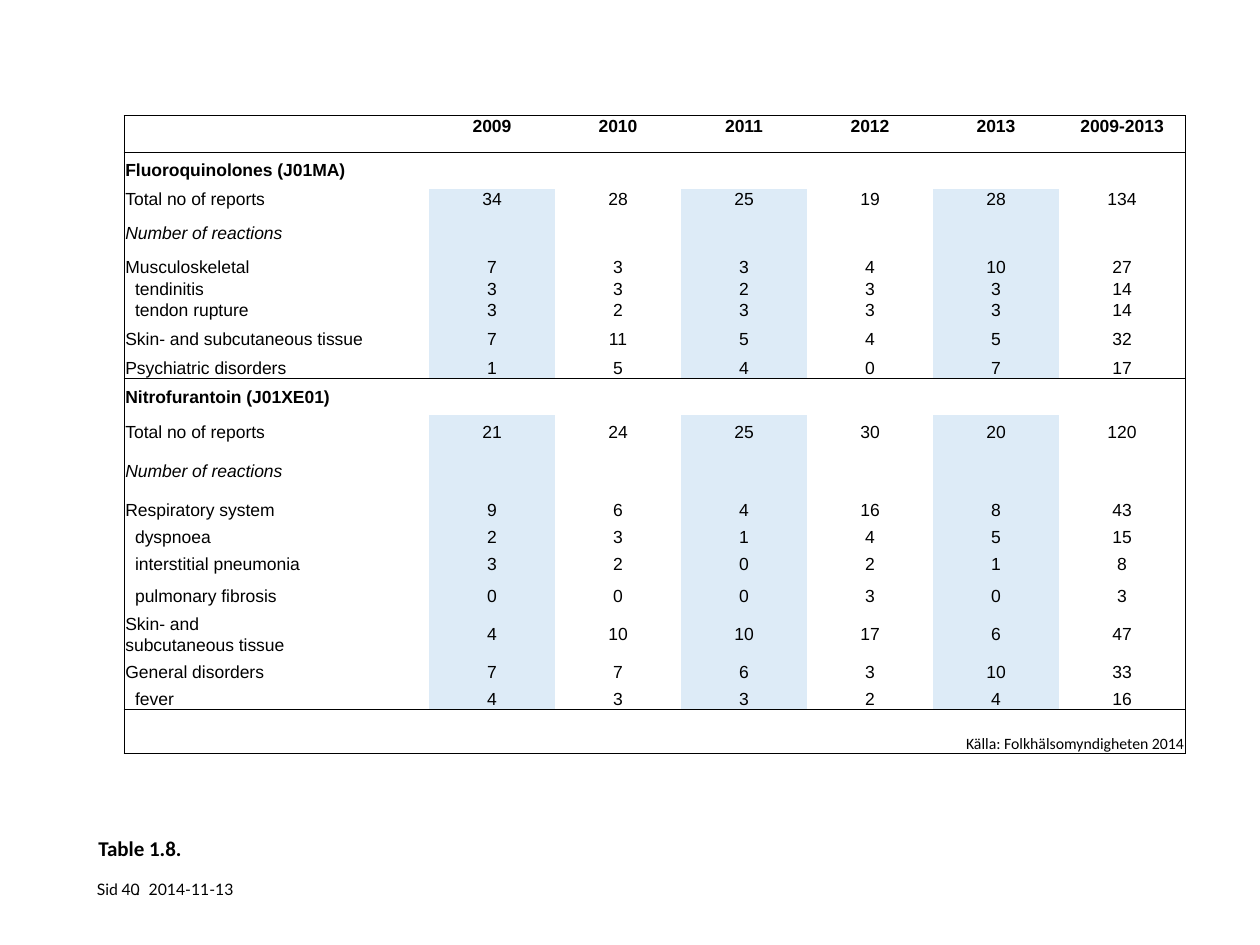
import lxml.etree
import pptx
import pptx.dml.color
import pptx.enum.text
import pptx.oxml.ns
import pptx.util

Pt = pptx.util.Pt
qn = pptx.oxml.ns.qn
ALIGN = pptx.enum.text.PP_ALIGN
ANCHOR = pptx.enum.text.MSO_ANCHOR

BLACK = pptx.dml.color.RGBColor(0x00, 0x00, 0x00)
PALE_BLUE = pptx.dml.color.RGBColor(0xDD, 0xEB, 0xF7)

LABEL_WIDTH, YEAR_WIDTH = 174.24, 72
SUB_INDENT = 5.56
CELL_MARGIN = 0.72
SHORT, MEDIUM, TALL = 12.24, 18.72, 20.88

# Height, label, values; labels starting with ">" are sub-items
HEADER = [(TALL, "", ["2009", "2010", "2011", "2012", "2013", "2009-2013"])]
FLUOROQUINOLONES = [
    (TALL, "Fluoroquinolones (J01MA)", []),
    (SHORT, "Total no of reports", [34, 28, 25, 19, 28, 134]),
    (26.64, "Number of reactions", []),
    (SHORT, "Musculoskeletal", [7, 3, 3, 4, 10, 27]),
    (SHORT, ">tendinitis", [3, 3, 2, 3, 3, 14]),
    (SHORT, ">tendon rupture", [3, 2, 3, 3, 3, 14]),
    (TALL, "Skin- and subcutaneous tissue", [7, 11, 5, 4, 5, 32]),
    (SHORT, "Psychiatric disorders", [1, 5, 4, 0, 7, 17]),
]
NITROFURANTOIN = [
    (TALL, "Nitrofurantoin (J01XE01)", []),
    (MEDIUM, "Total no of reports", [21, 24, 25, 30, 20, 120]),
    (25.92, "Number of reactions", []),
    (MEDIUM, "Respiratory system", [9, 6, 4, 16, 8, 43]),
    (SHORT, ">dyspnoea", [2, 3, 1, 4, 5, 15]),
    (MEDIUM, ">interstitial pneumonia", [3, 2, 0, 2, 1, 8]),
    (MEDIUM, ">pulmonary fibrosis", [0, 0, 0, 3, 0, 3]),
    (SHORT, "Skin- and", [4, 10, 10, 17, 6, 47]),
    (SHORT, "subcutaneous tissue", []),
    (MEDIUM, "General disorders", [7, 7, 6, 3, 10, 33]),
    (SHORT, ">fever", [4, 3, 3, 2, 4, 16]),
]
SOURCE = [(SHORT, "", []),
          (SHORT, "", ["", "", "", "Källa: Folkhälsomyndigheten 2014"])]
SECTIONS = [HEADER, FLUOROQUINOLONES, NITROFURANTOIN, SOURCE]


def write(frame, text, font="Lato", size=9, bold=False, italic=False,
          align=ALIGN.LEFT, leading=None):
    line = frame.paragraphs[0]
    line.alignment = align
    if leading:
        line.line_spacing = Pt(leading)
    if not text:
        # The end mark keeps an empty cell as low as its row
        lxml.etree.SubElement(line._p, qn("a:endParaRPr"), sz=str(size * 100))
        return
    run = line.add_run()
    run.text = text
    run.font.name, run.font.size = font, Pt(size)
    run.font.bold, run.font.italic = bold, italic
    run.font.color.rgb = BLACK


def set_borders(cell, drawn):
    """Draw the sides named in drawn (of L, R, T, B) and clear the others."""
    properties = cell._tc.get_or_add_tcPr()
    for side in "LRTB":
        border = lxml.etree.SubElement(properties, qn("a:ln" + side), w=str(Pt(0.5)))
        if side in drawn:
            fill = lxml.etree.SubElement(border, qn("a:solidFill"))
            lxml.etree.SubElement(fill, qn("a:srgbClr"), val=str(BLACK))
        else:
            lxml.etree.SubElement(border, qn("a:noFill"))


class ReportSlide:
    def __init__(self, slide):
        self.slide = slide

    def title(self, text, left, top, width, height):
        heading = self.slide.shapes.title
        heading.left, heading.top = Pt(left), Pt(top)
        heading.width, heading.height = Pt(width), Pt(height)
        self.set_frame(heading.text_frame, ANCHOR.BOTTOM)
        write(heading.text_frame, text, font="Calibri", size=12, bold=True, leading=34)

    def label(self, text, left, top, width, height, anchor=ANCHOR.TOP,
              inset=(0, 0), wrap=True, **style):
        box = self.slide.shapes.add_textbox(Pt(left), Pt(top), Pt(width), Pt(height))
        self.set_frame(box.text_frame, anchor, inset, wrap)
        write(box.text_frame, text, **style)

    def set_frame(self, frame, anchor, inset=(0, 0), wrap=True):
        frame.word_wrap = wrap
        frame.auto_size = pptx.enum.text.MSO_AUTO_SIZE.NONE
        frame.vertical_anchor = anchor
        frame.margin_left = frame.margin_right = Pt(inset[0])
        frame.margin_top = frame.margin_bottom = Pt(inset[1])

    def reactions_table(self, left, top):
        rows = [row for section in SECTIONS for row in section]
        rules = {0}
        for section in SECTIONS:
            rules.add(max(rules) + len(section))
        widths = [LABEL_WIDTH] + [YEAR_WIDTH] * 6
        table = self.slide.shapes.add_table(
            len(rows), len(widths), Pt(left), Pt(top), Pt(sum(widths)),
            Pt(sum(row[0] for row in rows))).table
        table.first_row = table.horz_banding = False
        for column, width in zip(table.columns, widths):
            column.width = Pt(width)

        split_row = [row[1] for row in rows].index("Skin- and")
        for column in range(1, len(widths)):
            table.cell(split_row, column).merge(table.cell(split_row + 1, column))
        last = len(rows) - 1
        table.cell(last, 4).merge(table.cell(last, 6))

        for r, (height, label, values) in enumerate(rows):
            table.rows[r].height = Pt(height)
            texts = [label] + [str(value) for value in values]
            texts += [""] * (len(widths) - len(texts))
            shaded_row = 0 < r < last - 1 and not label.endswith(")")
            for c, text in enumerate(texts):
                cell = table.cell(r, c)
                span = cell.span_width if cell.is_merge_origin else 1
                sides = ("L" if c == 0 else "") + ("R" if c + span == len(widths) else "")
                sides += ("T" if r in rules else "") + ("B" if r + 1 in rules else "")
                set_borders(cell, sides)
                if shaded_row and c % 2:
                    cell.fill.solid()
                    cell.fill.fore_color.rgb = PALE_BLUE
                else:
                    cell.fill.background()
                self.table_text(cell, text, c, is_header=r == 0, is_source=r == last)

    def table_text(self, cell, text, column, is_header, is_source):
        indent = SUB_INDENT if text.startswith(">") else 0
        cell.margin_left = Pt(CELL_MARGIN + indent)
        cell.margin_right = cell.margin_top = Pt(CELL_MARGIN)
        cell.margin_bottom = 0
        if is_source:
            cell.vertical_anchor = ANCHOR.BOTTOM
            write(cell.text_frame, text, font="Calibri", align=ALIGN.RIGHT)
            return
        cell.vertical_anchor = ANCHOR.TOP if is_header else ANCHOR.MIDDLE
        write(cell.text_frame, text.lstrip(">"), font="Arial", size=10,
              bold=is_header or text.endswith(")"),
              italic=text == "Number of reactions",
              align=ALIGN.CENTER if column else ALIGN.LEFT)


def main():
    deck = pptx.Presentation()
    deck.slide_width, deck.slide_height = Pt(720), Pt(540)
    report = ReportSlide(deck.slides.add_slide(deck.slide_layouts[5]))
    footer_top = 498.96
    report.label(".", 73.44, footer_top, 11.52, 18, inset=(7.2, 3.6))
    report.label("Sid", 55.44, 502.56, 12.24, 10.8, wrap=False)
    report.label("40", 56.16, footer_top, 23.76, 14.4, anchor=ANCHOR.BOTTOM,
                 align=ALIGN.RIGHT)
    report.label("2014-11-13", 84.96, footer_top, 61.92, 14.4, anchor=ANCHOR.BOTTOM)
    report.reactions_table(70.92, 66)
    report.title("Table 1.8.", 56.16, 459.36, 230.4, 32.4)
    deck.save("out.pptx")


if __name__ == "__main__":
    main()
